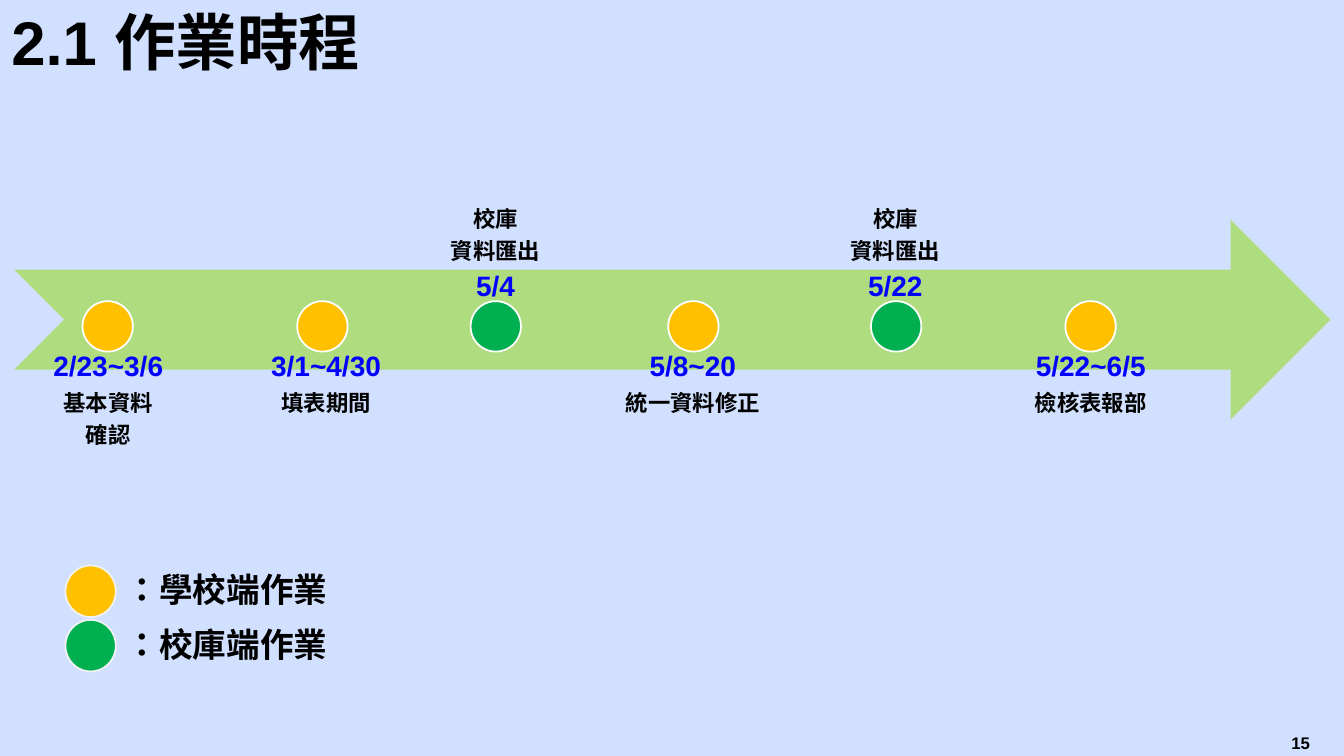
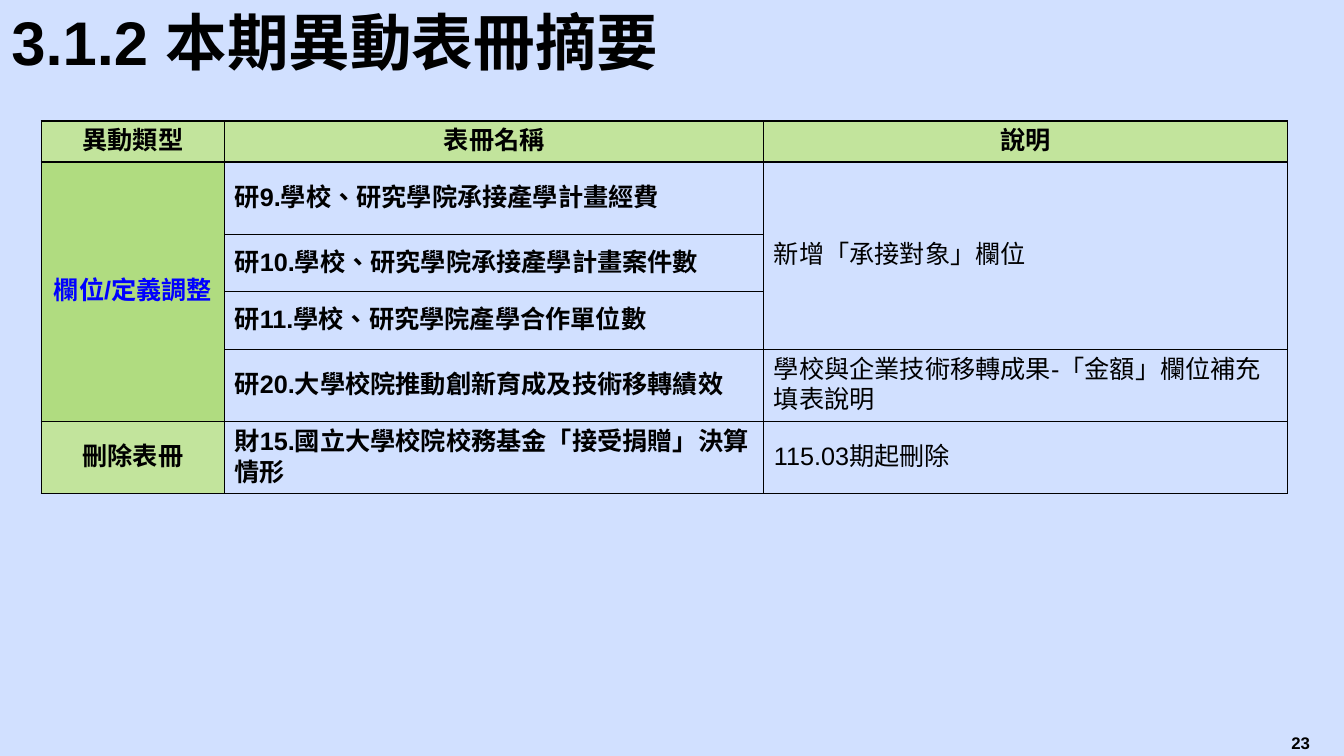
"""Build the work schedule and form change slides."""
from dataclasses import dataclass
from typing import Any

from lxml import etree
from pptx import Presentation
from pptx.dml.color import RGBColor
from pptx.enum.lang import MSO_LANGUAGE_ID
from pptx.enum.shapes import MSO_SHAPE
from pptx.enum.text import MSO_ANCHOR, MSO_AUTO_SIZE, PP_ALIGN
from pptx.oxml.ns import qn
from pptx.util import Cm, Pt

LEFT, MID = PP_ALIGN.LEFT, PP_ALIGN.CENTER
TOP, CORE, BASE = MSO_ANCHOR.TOP, MSO_ANCHOR.MIDDLE, MSO_ANCHOR.BOTTOM
NO_FIT = MSO_AUTO_SIZE.NONE
ARROW, OVAL = MSO_SHAPE.NOTCHED_RIGHT_ARROW, MSO_SHAPE.OVAL
NODE = MSO_SHAPE.FLOWCHART_CONNECTOR
CHINESE = MSO_LANGUAGE_ID.TRADITIONAL_CHINESE

SKY = RGBColor(0xD1, 0xE0, 0xFF)
BLACK = RGBColor(0, 0, 0)
BLUE = RGBColor(0, 0, 0xFF)
WHITE = RGBColor(0xFF, 0xFF, 0xFF)
PALE = RGBColor(0xF2, 0xF2, 0xF2)
LIME = RGBColor(0xB0, 0xDC, 0x80)
LIGHT = RGBColor(0xC2, 0xE4, 0x9C)
GOLD = RGBColor(0xFF, 0xC0, 0x00)
GREEN = RGBColor(0x00, 0xB0, 0x50)

FONT = {"name": "Arial", "bold": True, "language_id": CHINESE}
HEAD = {**FONT, "size": Pt(44)}
DATE = {**FONT, "size": Pt(20)}
NOTE = {**FONT, "size": Pt(16)}
KEY = {**FONT, "size": Pt(24)}
PAGE = {**FONT, "size": Pt(12)}
STRONG = {**FONT, "size": Pt(18)}
PLAIN = {**STRONG, "bold": False}

CENTRE = {"alignment": MID}
TITLE = {"alignment": LEFT, "line_spacing": 0.9}
STEP = {"alignment": MID, "line_spacing": 0.9, "space_after": Pt(0)}
ROW = {"alignment": LEFT, "line_spacing": Pt(22)}
SIDES = ("margin_left", "margin_top", "margin_right", "margin_bottom")


@dataclass
class Stop:
    """A dated point on the arrow; lengths in centimetres."""
    left: float
    wide: float
    dot: float
    date: str
    notes: tuple[str, ...]
    above: bool = False


@dataclass
class Entry:
    """A table cell with its place, span and look."""
    row: int
    col: int
    text: str
    look: dict[str, Any]
    fill: RGBColor | None = None
    ink: RGBColor = BLACK
    span: int = 1


STOPS = (
    Stop(0.38, 4.7, 2.08, "2/23~3/6", ("基本資料", "確認")),
    Stop(5.59, 5.26, 7.49, "3/1~4/30", ("填表期間",)),
    Stop(10.52, 3.94, 11.86, "5/4", ("校庫", "資料匯出"), True),
    Stop(14.55, 5.82, 16.84, "5/8~20", ("統一資料修正",)),
    Stop(20.47, 4.19, 21.95, "5/22", ("校庫", "資料匯出"), True),
    Stop(24.77, 5.44, 26.85, "5/22~6/5", ("檢核表報部",)),
)
LEGEND = ((GOLD, "：學校端作業"), (GREEN, "：校庫端作業"))
COLS = (4.62, 13.59, 13.2)
ROWS = (1.02, 1.82, 1.45, 1.45, 1.82, 1.82)
CELLS = (
    Entry(0, 0, "異動類型", STRONG, LIGHT),
    Entry(0, 1, "表冊名稱", STRONG, LIGHT),
    Entry(0, 2, "說明", STRONG, LIGHT),
    Entry(1, 0, "欄位/定義調整", STRONG, LIME, BLUE, 4),
    Entry(1, 1, "研9.學校、研究學院承接產學計畫經費", STRONG),
    Entry(1, 2, "新增「承接對象」欄位", PLAIN, span=3),
    Entry(2, 1, "研10.學校、研究學院承接產學計畫案件數", STRONG),
    Entry(3, 1, "研11.學校、研究學院產學合作單位數", STRONG),
    Entry(4, 1, "研20.大學校院推動創新育成及技術移轉績效", STRONG),
    Entry(4, 2, "學校與企業技術移轉成果-「金額」欄位補充填表說明", PLAIN),
    Entry(5, 0, "刪除表冊", STRONG, LIGHT),
    Entry(5, 1, "財15.國立大學校院校務基金「接受捐贈」決算情形", STRONG),
    Entry(5, 2, "115.03期起刪除", PLAIN),
)


def apply(target: Any, values: dict[str, Any]) -> None:
    """Set each named attribute on the target."""
    for name, value in values.items():
        setattr(target, name, value)


def write(para: Any, text: str, look: dict[str, Any], form: dict[str, Any],
          ink: RGBColor = BLACK) -> None:
    """Fill a paragraph with one styled run."""
    apply(para, form)
    run = para.add_run()
    run.text = text
    apply(run.font, look)
    run.font.color.rgb = ink


def space(para: Any) -> None:
    """Make the space after a paragraph 35 percent."""
    after = para._p.pPr.find(qn("a:spcAft"))
    after.clear()
    etree.SubElement(after, qn("a:spcPct"), val="35000")


def add_text(shapes: Any, box: tuple[float, ...], anchor: Any = TOP,
             wrap: bool = True) -> Any:
    """Add a text box and return its frame."""
    frame = shapes.add_textbox(*map(Cm, box)).text_frame
    apply(frame, {"word_wrap": wrap, "auto_size": NO_FIT,
                  "vertical_anchor": anchor})
    return frame


def add_form(shapes: Any, kind: Any, box: tuple[float, ...], fill: RGBColor,
             edge: RGBColor | None = None) -> None:
    """Add a filled shape with an optional outline."""
    shape = shapes.add_shape(kind, *map(Cm, box))
    shape.shadow.inherit = False
    shape.fill.solid()
    shape.fill.fore_color.rgb = fill
    if edge is None:
        shape.line.fill.background()
    else:
        shape.line.color.rgb = edge
        shape.line.width = Pt(1.25)


def add_slide(deck: Any, text: str, page: str, wide: float) -> Any:
    """Add a slide with its title and page number."""
    slide = deck.slides.add_slide(deck.slide_layouts[5])
    title = slide.shapes.title
    apply(title, {"left": Cm(0.03), "top": Cm(0.3),
                  "width": Cm(wide), "height": Cm(1.7)})
    frame = title.text_frame
    apply(frame, {"vertical_anchor": CORE, "word_wrap": True,
                  "auto_size": NO_FIT})
    write(frame.paragraphs[0], text, HEAD, TITLE)
    foot = add_text(slide.shapes, (31.7, 18.34, 2.16, 0.71))
    write(foot.paragraphs[0], page, PAGE, CENTRE)
    return slide


def add_stop(shapes: Any, stop: Stop) -> None:
    """Draw the text and dot of one stop."""
    top, anchor, inset = (2.9, BASE, 0.3) if stop.above else (8.46, TOP, 0.41)
    frame = add_text(shapes, (stop.left, top, stop.wide, 5.03), anchor)
    apply(frame, dict.fromkeys(SIDES, Cm(inset)))
    lines = [(note, NOTE, BLACK) for note in stop.notes]
    lines.insert(len(lines) if stop.above else 0, (stop.date, DATE, BLUE))
    for rank, (text, look, ink) in enumerate(lines):
        para = frame.add_paragraph() if rank else frame.paragraphs[0]
        write(para, text, look, STEP, ink)
        space(para)
    add_form(shapes, OVAL, (stop.dot, 7.59, 1.27, 1.27),
             GREEN if stop.above else GOLD, WHITE)


def add_chart(slide: Any) -> None:
    """Draw the arrow with its stops and legend."""
    group = slide.shapes.add_group_shape().shapes
    add_form(group, ARROW, (0.36, 5.54, 33.17, 5.03), LIME)
    for stop in STOPS:
        add_stop(group, stop)
    legend = slide.shapes.add_group_shape().shapes
    for rank, (fill, text) in enumerate(LEGEND):
        top = 14.22 + 1.37 * rank
        add_form(legend, NODE, (1.65, top + 0.03, 1.27, 1.3), fill, PALE)
        frame = add_text(legend, (2.92, top, 5.64, 1.27), wrap=False)
        write(frame.paragraphs[0], text, KEY, {"alignment": LEFT})


def frame_cell(cell: Any) -> None:
    """Draw thin black borders round a cell."""
    props = cell._tc.get_or_add_tcPr()
    for rank, side in enumerate(("lnL", "lnR", "lnT", "lnB")):
        line = etree.Element(qn(f"a:{side}"), w=str(Pt(1)))
        fill = etree.SubElement(line, qn("a:solidFill"))
        etree.SubElement(fill, qn("a:srgbClr"), val=str(BLACK))
        props.insert(rank, line)


def add_grid(slide: Any) -> None:
    """Draw the table of changed forms."""
    box = map(Cm, (1.04, 3.05, sum(COLS), sum(ROWS)))
    table = slide.shapes.add_table(len(ROWS), len(COLS), *box).table
    apply(table, {"first_row": False, "horz_banding": False})
    for col, wide in zip(table.columns, COLS):
        col.width = Cm(wide)
    for row, high in zip(table.rows, ROWS):
        row.height = Cm(high)
    for cell in table.iter_cells():
        cell.fill.background()
        frame_cell(cell)
    for item in CELLS:
        cell = table.cell(item.row, item.col)
        if item.span > 1:
            cell.merge(table.cell(item.row + item.span - 1, item.col))
        if item.fill is not None:
            cell.fill.solid()
            cell.fill.fore_color.rgb = item.fill
        cell.vertical_anchor = CORE
        form = ROW if item.fill is None else {**ROW, **CENTRE}
        write(cell.text_frame.paragraphs[0], item.text, item.look, form,
              item.ink)


def main() -> None:
    """Build and save the deck."""
    deck = Presentation()
    apply(deck, {"slide_width": Cm(33.87), "slide_height": Cm(19.05)})
    back = deck.slide_master.background.fill
    back.solid()
    back.fore_color.rgb = SKY
    add_chart(add_slide(deck, "2.1 作業時程", "15", 33.83))
    add_grid(add_slide(deck, "3.1.2 本期異動表冊摘要", "23", 22.33))
    deck.save("out.pptx")


if __name__ == "__main__":
    main()
